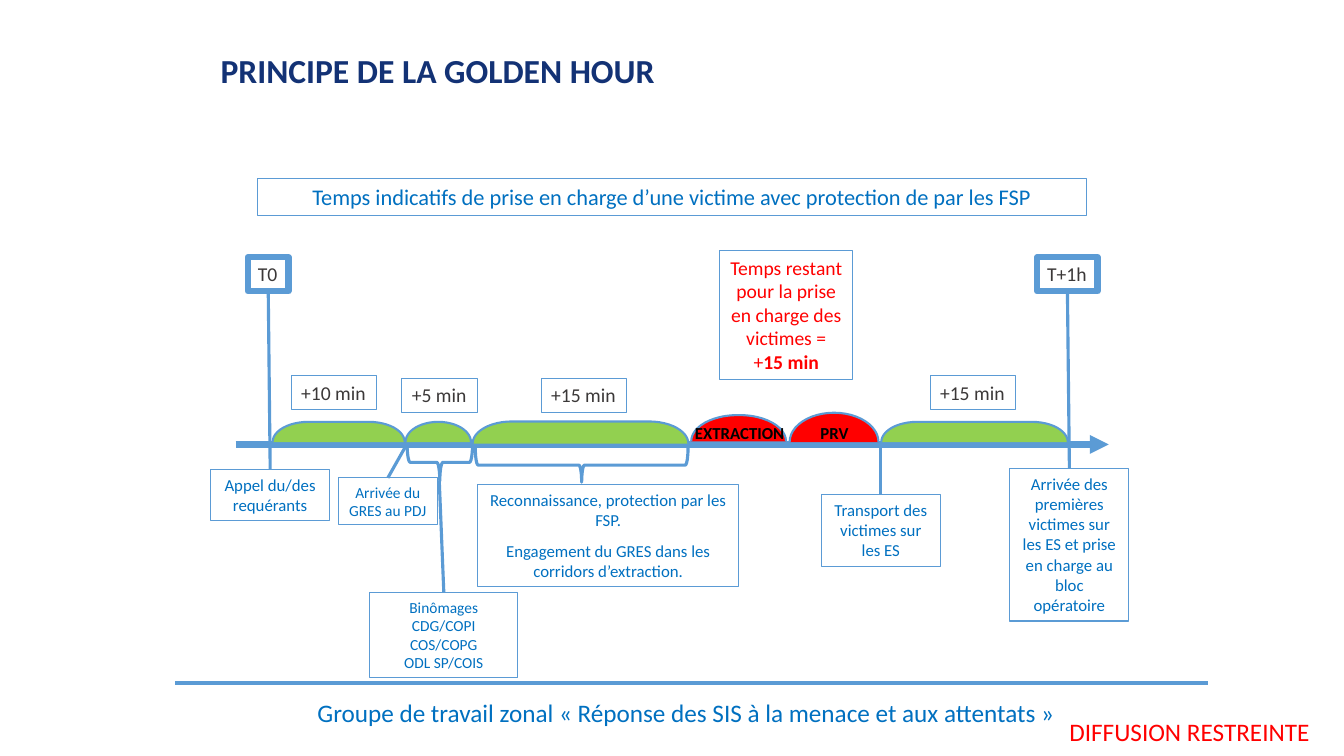
"""Build the golden hour timeline slide."""
from dataclasses import dataclass
from typing import Optional

from lxml import etree
from pptx import Presentation
from pptx import util as u
from pptx.dml import color
from pptx.enum import shapes, text
from pptx.oxml import ns
from pptx.shapes import autoshape, connector
from pptx.slide import Slide

BLUE, TEXT_BLUE, NAVY = "5B9BD5", "0070C0", "133275"
GREEN, RED, GREY, BLACK = "92D050", "FF0000", "3B3838", "000000"
AXIS_Y = 11.2


@dataclass
class Label:
    left: float
    top: float
    width: float
    height: float
    paragraphs: tuple[str, ...]
    size: float = 12
    ink: str = TEXT_BLUE
    border: Optional[float] = 0.75
    bold: bool = False
    centred: bool = True
    wrap: bool = True
    bold_tail: str = ""
    gap: float = 0


@dataclass
class Span:
    """A half-turned bracket or brace, placed by its visible frame."""
    left: float
    top: float
    width: float
    height: float
    fill: Optional[str] = None


def rgb(hex_code: str) -> color.RGBColor:
    """Turn a hex string into a colour."""
    return color.RGBColor.from_string(hex_code)


def draw_label(slide: Slide, label: Label) -> autoshape.Shape:
    """Draw a text, framed when it has a border."""
    frame = [u.Cm(n) for n in (label.left, label.top, label.width, label.height)]
    if label.border is None:
        box = slide.shapes.add_textbox(*frame)
    else:
        box = slide.shapes.add_shape(shapes.MSO_SHAPE.RECTANGLE, *frame)
        box.shadow.inherit = False
        box.fill.background()
        box.line.color.rgb = rgb(BLUE)
        box.line.width = u.Pt(label.border)
    body = box.text_frame
    body.text = "\n".join(label.paragraphs)
    body.word_wrap = label.wrap
    body.auto_size = text.MSO_AUTO_SIZE.SHAPE_TO_FIT_TEXT
    body.vertical_anchor = text.MSO_ANCHOR.TOP
    if label.bold_tail:
        body.paragraphs[-1].add_run().text = label.bold_tail
    for index, paragraph in enumerate(body.paragraphs):
        paragraph.alignment = text.PP_ALIGN.CENTER if label.centred else text.PP_ALIGN.LEFT
        if index and label.gap:
            paragraph.space_before = u.Pt(label.gap)
        for run in paragraph.runs:
            run.font.name = "Calibri"
            run.font.size = u.Pt(label.size)
            run.font.bold = label.bold or run.text == label.bold_tail
            run.font.color.rgb = rgb(label.ink)
    return box


def draw_span(slide: Slide, span: Span) -> None:
    """Draw a filled arc above the axis or an open brace below it."""
    kind = shapes.MSO_SHAPE.RIGHT_BRACKET if span.fill else shapes.MSO_SHAPE.LEFT_BRACE
    shift = (span.width - span.height) / 2
    mark = slide.shapes.add_shape(kind, u.Cm(span.left + shift), u.Cm(span.top - shift),
                                  u.Cm(span.height), u.Cm(span.width))
    mark.rotation = 270
    mark.shadow.inherit = False
    mark.line.color.rgb = rgb(BLUE)
    if span.fill:
        mark.adjustments[0] = 1.77
        mark.fill.solid()
        mark.fill.fore_color.rgb = rgb(span.fill)
        mark.line.width = u.Pt(1.5)
    else:
        mark.fill.background()
        mark.line.width = u.Pt(2.25)


def draw_line(slide: Slide, start: tuple[float, float], end: tuple[float, float],
              width: float = 2.25) -> connector.Connector:
    """Draw a straight blue line."""
    line = slide.shapes.add_connector(shapes.MSO_CONNECTOR.STRAIGHT,
                                      *(u.Cm(n) for n in (*start, *end)))
    line.line.color.rgb = rgb(BLUE)
    line.line.width = u.Pt(width)
    etree.SubElement(line._element.spPr, ns.qn("a:effectLst"))
    return line


def time_label(left: float, top: float, width: float, words: str, border: float = 0.75) -> Label:
    """Describe a small box that holds a time."""
    return Label(left, top, width, 0.86, (words,), 14, GREY, border, centred=False, wrap=False)


SPANS = [
    Span(6.87, 10.63, 3.33, 0.51, GREEN),
    Span(10.22, 10.63, 1.65, 0.51, GREEN),
    Span(11.91, 10.62, 5.44, 0.56, GREEN),
    Span(17.42, 10.46, 2.39, 0.66, RED),
    Span(19.9, 10.4, 2.24, 0.74, RED),
    Span(22.21, 10.63, 4.7, 0.51, GREEN),
    Span(11.98, 11.29, 5.36, 0.86),
    Span(10.26, 11.18, 1.65, 0.94),
]

LABELS = [
    Label(7.75, 17.45, 19.38, 1.02,
          ("Groupe de travail zonal « Réponse des SIS à la menace et aux attentats »",),
          18, border=None, centred=False, wrap=False),
    Label(26.7, 17.93, 7.52, 1.02, ("DIFFUSION RESTREINTE",), 18, RED, None, centred=False),
    Label(6.48, 4.5, 20.9, 0.94,
          ("Temps indicatifs de prise en charge d’une victime avec protection de par les FSP",), 16),
    Label(18.14, 6.32, 3.35, 3.25,
          ("Temps restant pour la prise en charge des victimes = +",), 14, RED, bold_tail="15 min"),
    time_label(7.34, 9.47, 2.16, "+10 min"),
    time_label(10.13, 9.53, 1.91, "+5 min"),
    time_label(13.64, 9.53, 2.16, "+15 min"),
    time_label(23.44, 9.47, 2.16, "+15 min"),
    Label(12.04, 12.22, 6.58, 2.57,
          ("Reconnaissance, protection par les FSP.",
           "Engagement du GRES dans les corridors d’extraction."), gap=7.2),
    Label(16.94, 10.52, 3.4, 0.76, ("EXTRACTION",), 12, BLACK, None, bold=True),
    Label(19.33, 10.52, 3.4, 0.76, ("PRV",), 12, BLACK, None, bold=True),
]

MILESTONES = [
    (time_label(6.25, 6.48, 1.02, "T0", 4.5),
     Label(5.31, 11.84, 3, 1.27, ("Appel du/des requérants",))),
    (time_label(26.14, 6.48, 1.52, "T+1h", 4.5),
     Label(25.45, 11.81, 3, 3.84,
           ("Arrivée des premières victimes sur les ES et prise en charge au bloc opératoire",))),
]

STEPS = [
    ((10.26, 11.18), Label(8.53, 12.04, 2.49, 1.19, ("Arrivée du GRES au PDJ",), 11)),
    ((11.07, 12.12), Label(9.32, 14.94, 3.73, 2.13,
                           ("Binômages", "CDG/COPI", "COS/COPG", "ODL SP/COIS"), 11)),
    ((22.2, 11.13), Label(20.7, 12.47, 3, 1.8, ("Transport des victimes sur les ES",))),
]


def main() -> None:
    """Compose and save the slide."""
    deck = Presentation()
    deck.slide_width, deck.slide_height = u.Cm(33.87), u.Cm(19.05)
    slide = deck.slides.add_slide(deck.slide_layouts[6])

    draw_line(slide, (4.42, 17.22), (30.45, 17.22), 3)
    title = draw_label(slide, Label(5.31, 0.23, 25.4, 3.18, ("PRINCIPE DE LA GOLDEN HOUR",),
                                    24, NAVY, None, bold=True, centred=False))
    title.text_frame.auto_size = text.MSO_AUTO_SIZE.NONE
    title.text_frame.vertical_anchor = text.MSO_ANCHOR.MIDDLE
    title.text_frame.paragraphs[0].line_spacing = 0.9

    axis = draw_line(slide, (5.94, AXIS_Y), (27.94, AXIS_Y), 4.5)
    etree.SubElement(axis.line._get_or_add_ln(), ns.qn("a:tailEnd"), type="triangle")

    for span in SPANS:
        draw_span(slide, span)
    for label in LABELS:
        draw_label(slide, label)
    for moment, event in MILESTONES:
        moment_box, event_box = draw_label(slide, moment), draw_label(slide, event)
        stem = draw_line(slide, (0, 0), (1, 1))
        stem.begin_connect(moment_box, 2)
        stem.end_connect(event_box, 0)
    for anchor, step in STEPS:
        step_box = draw_label(slide, step)
        draw_line(slide, anchor, (step.left, step.top)).end_connect(step_box, 0)

    deck.save("out.pptx")


if __name__ == "__main__":
    main()
